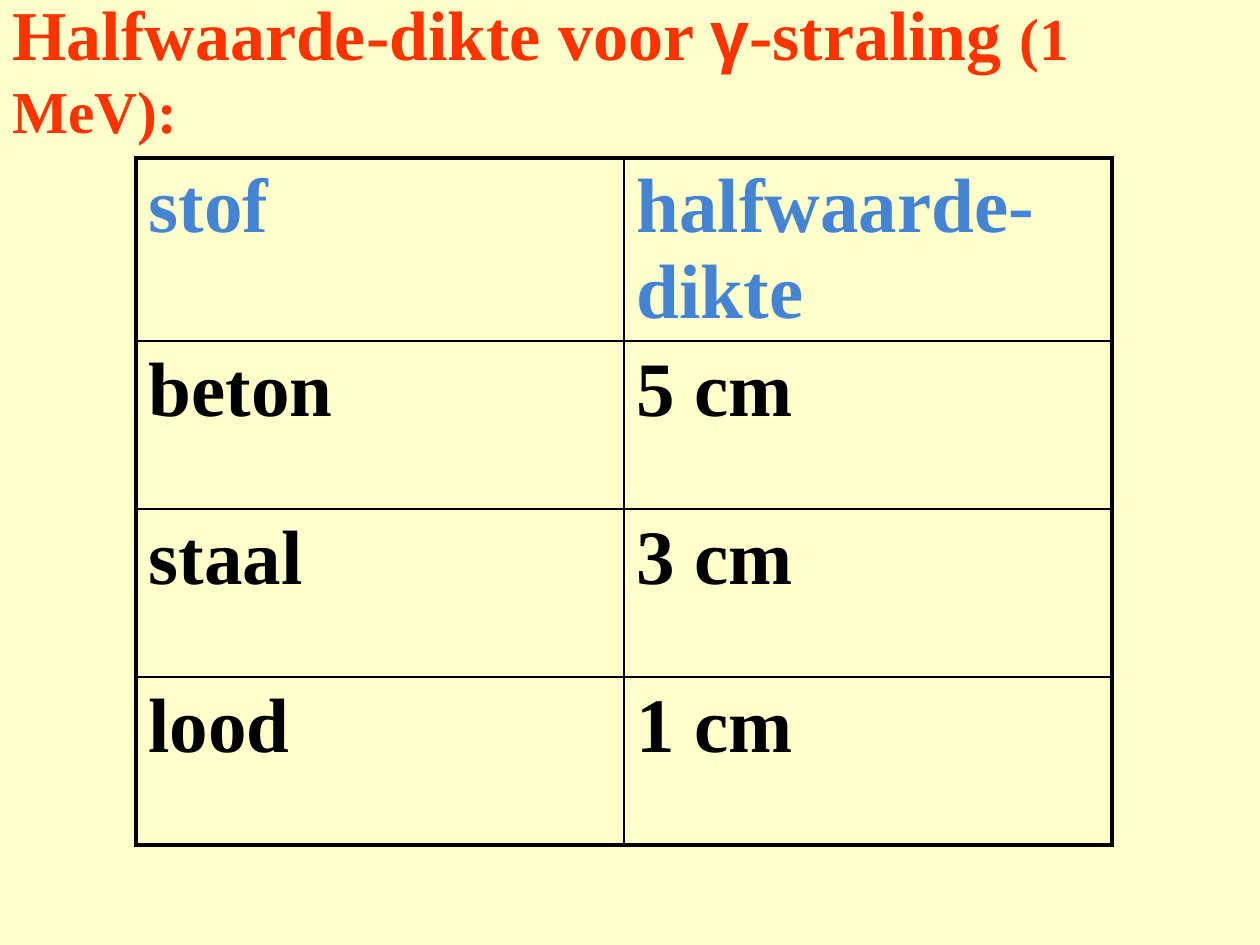
from dataclasses import dataclass

from lxml import etree
from pptx import Presentation
from pptx.dml.color import RGBColor
from pptx.enum.text import MSO_ANCHOR, PP_ALIGN
from pptx.oxml.ns import qn
from pptx.util import Pt

LEFT = PP_ALIGN.LEFT
MIDDLE = MSO_ANCHOR.MIDDLE
PX = 914400 // 126
TITLE_ONLY = 5


@dataclass(frozen=True)
class Theme:
    background: str = "FFFFCC"
    title: str = "FF3300"
    header: str = "4584D3"
    body: str = "000000"
    border: str = "000000"
    font: str = "Times New Roman"
    greek_font: str = "Arial"
    title_size: float = 40
    energy_size: float = 34
    table_size: float = 44
    outer_line: float = 2.25
    inner_line: float = 1


THEME = Theme()

TITLE = [
    ("Halfwaarde-dikte voor ", THEME.font, THEME.title_size),
    ("γ", THEME.greek_font, THEME.title_size),
    ("-straling ", THEME.font, THEME.title_size),
    ("(1 MeV):", THEME.font, THEME.energy_size),
]
THICKNESSES = [
    ("stof", "halfwaarde-dikte"),
    ("beton", "5 cm"),
    ("staal", "3 cm"),
    ("lood", "1 cm"),
]

SLIDE_SIZE = (1260, 945)
TITLE_BOX = (0, 10, 1260, 116)
TABLE_LEFT, TABLE_TOP = 136, 158
COLUMN_WIDTH, ROW_HEIGHT = 488, 168


def px(*lengths):
    return [length * PX for length in lengths]


def style_font(font, name, size, color):
    font.name = name
    font.size = Pt(size)
    font.bold = True
    font.color.rgb = RGBColor.from_string(color)


def add_title(slide):
    title = slide.shapes.title
    title.left, title.top, title.width, title.height = px(*TITLE_BOX)
    frame = title.text_frame
    frame.word_wrap = True
    frame.vertical_anchor = MIDDLE
    paragraph = frame.paragraphs[0]
    paragraph.alignment = LEFT
    for text, font_name, size in TITLE:
        run = paragraph.add_run()
        run.text = text
        style_font(run.font, font_name, size, THEME.title)


def set_borders(cell, outer_edges):
    """Draw all four cell borders, heavier on the table's outer edges."""
    properties = cell._tc.get_or_add_tcPr()
    for index, (edge, is_outer) in enumerate(outer_edges.items()):
        width = THEME.outer_line if is_outer else THEME.inner_line
        line = etree.Element(qn(f"a:ln{edge}"), w=str(Pt(width)))
        fill = etree.SubElement(line, qn("a:solidFill"))
        etree.SubElement(fill, qn("a:srgbClr"), val=THEME.border)
        properties.insert(index, line)


def set_space_before(paragraph, percent):
    properties = paragraph._p.get_or_add_pPr()
    spacing = etree.SubElement(properties, qn("a:spcBef"))
    etree.SubElement(spacing, qn("a:spcPct"), val=str(percent * 1000))


def add_thickness_table(slide):
    row_count, column_count = len(THICKNESSES), len(THICKNESSES[0])
    bounds = px(TABLE_LEFT, TABLE_TOP,
                column_count * COLUMN_WIDTH, row_count * ROW_HEIGHT)
    table = slide.shapes.add_table(row_count, column_count, *bounds).table
    table.first_row = table.horz_banding = False
    for r, values in enumerate(THICKNESSES):
        for c, value in enumerate(values):
            cell = table.cell(r, c)
            cell.text = value
            cell.fill.background()
            set_borders(cell, {"L": c == 0, "R": c == column_count - 1,
                               "T": r == 0, "B": r == row_count - 1})
            paragraph = cell.text_frame.paragraphs[0]
            set_space_before(paragraph, 20)
            style_font(paragraph.font, THEME.font, THEME.table_size,
                       THEME.header if r == 0 else THEME.body)


def main():
    presentation = Presentation()
    presentation.slide_width, presentation.slide_height = px(*SLIDE_SIZE)
    slide = presentation.slides.add_slide(presentation.slide_layouts[TITLE_ONLY])
    background = slide.background.fill
    background.solid()
    background.fore_color.rgb = RGBColor.from_string(THEME.background)
    add_thickness_table(slide)
    add_title(slide)
    presentation.save("out.pptx")


if __name__ == "__main__":
    main()
